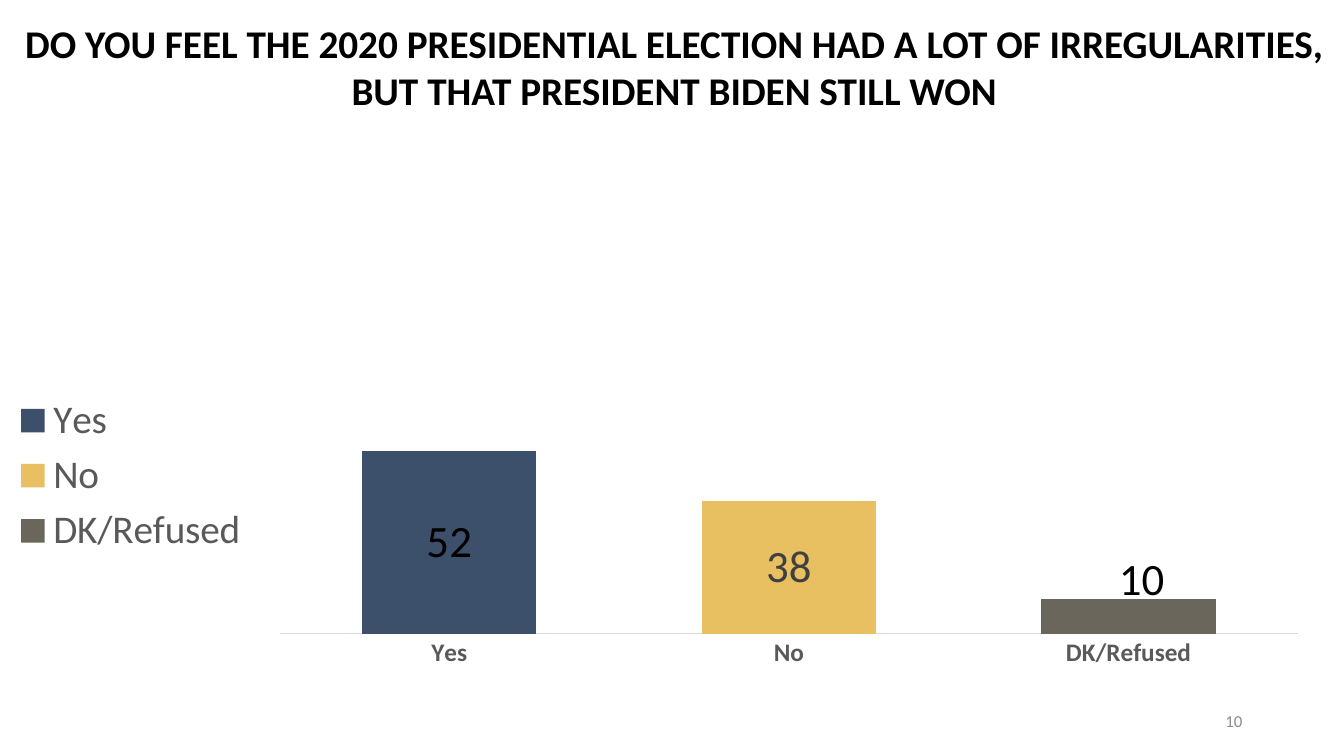
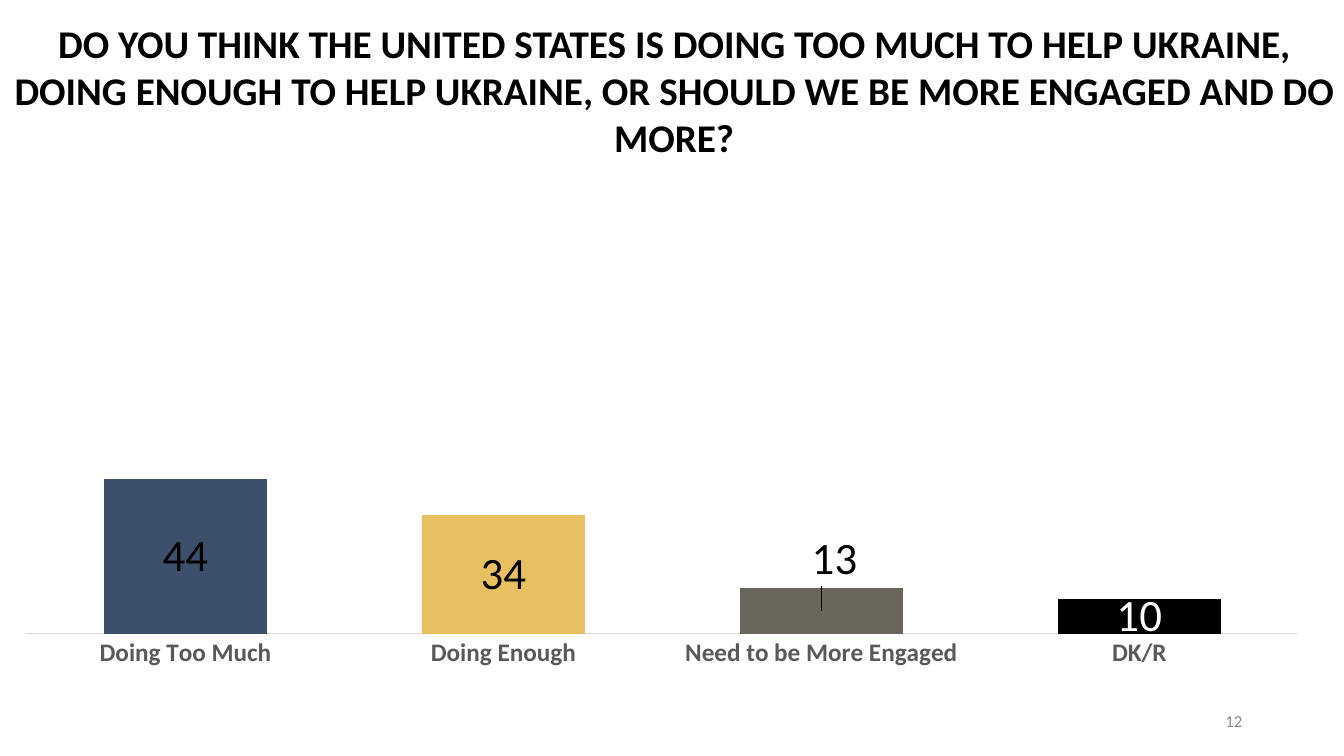
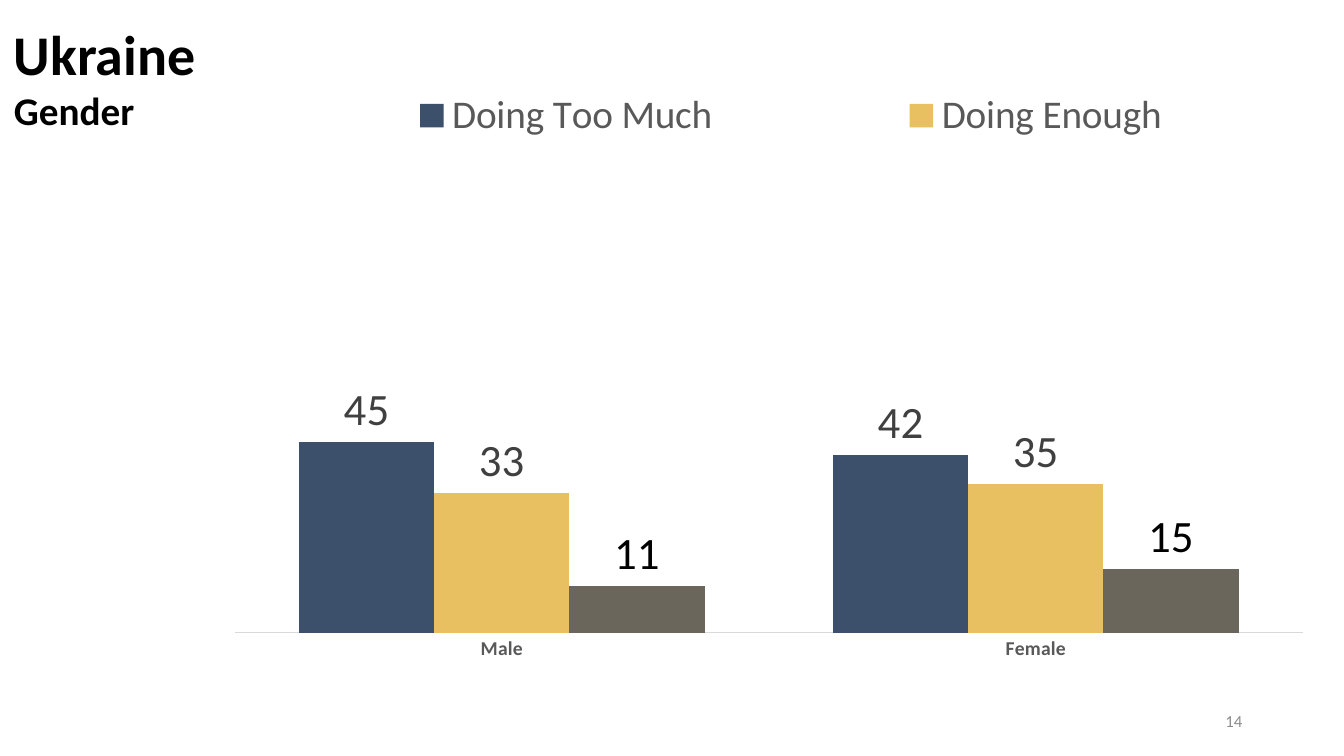
from lxml import etree
from pptx import Presentation
from pptx.chart.data import CategoryChartData
from pptx.dml.color import RGBColor
from pptx.enum.chart import (XL_CHART_TYPE, XL_LABEL_POSITION,
                             XL_LEGEND_POSITION, XL_TICK_MARK)
from pptx.enum.text import MSO_ANCHOR, PP_ALIGN
from pptx.oxml.ns import qn
from pptx.util import Inches, Pt

STACKED, CLUSTERED = XL_CHART_TYPE.COLUMN_STACKED, XL_CHART_TYPE.COLUMN_CLUSTERED
CENTER, OUTSIDE = XL_LABEL_POSITION.CENTER, XL_LABEL_POSITION.OUTSIDE_END
LEGEND_LEFT, LEGEND_TOP = XL_LEGEND_POSITION.LEFT, XL_LEGEND_POSITION.TOP
NO_TICK = XL_TICK_MARK.NONE
ALIGN_LEFT, ALIGN_CENTER, ALIGN_RIGHT = PP_ALIGN.LEFT, PP_ALIGN.CENTER, PP_ALIGN.RIGHT
TOP, MIDDLE = MSO_ANCHOR.TOP, MSO_ANCHOR.MIDDLE

FONT = "Calibri"
COLORS = {
    "navy": "3C4F6B", "gold": "E8C062", "stone": "6B665B",
    "black": "000000", "white": "FFFFFF", "dark": "404040",
    "gray": "595959", "number": "8C8C8C", "axis": "D9D9D9",
}
WIDE_CHART = (0, 2.73, 13.14, 3.98)


def rgb(name):
    return RGBColor.from_string(COLORS[name])


def style(font, size, color, bold=False):
    font.name, font.size, font.bold = FONT, Pt(size), bold
    font.color.rgb = rgb(color)


def fill(fmt, color):
    fmt.fill.solid()
    fmt.fill.fore_color.rgb = rgb(color)


# Text
def add_text(slide, box, lines, color="black", bold=True, align=ALIGN_LEFT, anchor=TOP):
    """Add a text box; lines are (text, size) pairs."""
    tf = slide.shapes.add_textbox(*map(Inches, box)).text_frame
    tf.word_wrap = True
    tf.vertical_anchor = anchor
    for i, (text, size) in enumerate(lines):
        p = tf.add_paragraph() if i else tf.paragraphs[0]
        p.text = text
        p.alignment = align
        style(p.runs[0].font, size, color, bold)


def add_question(slide, text, height):
    add_text(slide, (0.04, 0.14, 13.29, height), [(text, 28)], align=ALIGN_CENTER)


def add_number(slide, number):
    add_text(slide, (9.42, 6.95, 3, 0.4), [(str(number), 12)], "number", False,
             ALIGN_RIGHT, MIDDLE)


# Charts
def make_layout(**values):
    """Build a manual chart layout from its parts."""
    layout = etree.Element(qn("c:layout"))
    manual = etree.SubElement(layout, qn("c:manualLayout"))
    for tag, val in values.items():
        etree.SubElement(manual, qn("c:" + tag)).set("val", str(val))
    return layout


def add_columns(slide, box, kind, cats, series, axis_size=18):
    """Add a column chart; series are (name, values, fill, label colour)."""
    data = CategoryChartData()
    data.categories = cats
    for name, values, *_ in series:
        data.add_series(name, values)
    chart = slide.shapes.add_chart(kind, *map(Inches, box), data).chart
    chart.has_title = chart.has_legend = False
    style(chart.font, 10, "black")

    plot = chart.plots[0]
    plot.gap_width = 95
    plot.overlap = 100 if kind == STACKED else 0
    plot.vary_by_categories = False
    for s, (_, _, color, label_color) in zip(plot.series, series):
        fill(s.format, color)
        s.invert_if_negative = False
        labels = s.data_labels
        labels.show_value = True
        labels.position = CENTER if kind == STACKED else OUTSIDE
        style(labels.font, 32, label_color)

    axis = chart.category_axis
    axis.major_tick_mark = axis.minor_tick_mark = NO_TICK
    axis.format.line.color.rgb = rgb("axis")
    axis.format.line.width = Pt(0.75)
    style(axis.tick_labels.font, axis_size, "gray", True)

    scale = chart.value_axis
    scale.minimum_scale, scale.maximum_scale = 0, 100
    scale.has_major_gridlines = scale.visible = False
    return chart


def add_legend(chart, position):
    chart.has_legend = True
    chart.legend.position = position
    chart.legend.include_in_layout = False
    style(chart.legend.font, 28, "gray")


def style_point_label(series, index, color, shift=None):
    """Recolour one label and move it by a share of the chart size."""
    label = series.points[index].data_label
    style(label.font, 32, color)
    label.position = CENTER
    if shift:
        idx = series._element.xpath(f'c:dLbls/c:dLbl/c:idx[@val="{index}"]')[0]
        idx.addnext(make_layout(x=shift[0], y=shift[1]))


# Slides
def election_slide(slide):
    chart = add_columns(slide, WIDE_CHART, STACKED, ["Yes", "No", "DK/Refused"], [
        ("DK/Refused", (None, None, 10), "stone", "black"),
        ("No", (None, 38, None), "gold", "dark"),
        ("Yes", (52, None, None), "navy", "black"),
    ])
    add_legend(chart, LEGEND_LEFT)
    style_point_label(chart.plots[0].series[0], 2, "black", (0.01, -0.09))
    add_question(slide, "DO YOU FEEL THE 2020 PRESIDENTIAL ELECTION HAD A LOT OF "
                 "IRREGULARITIES, BUT THAT PRESIDENT BIDEN STILL WON", 1.51)
    add_number(slide, 10)


def ukraine_slide(slide):
    cats = ["Doing Too Much", "Doing Enough", "Need to be More Engaged", "DK/R"]
    chart = add_columns(slide, WIDE_CHART, STACKED, cats,
                        [("Series 1", (44, 34, 13, 10), "navy", "black")])
    s = chart.plots[0].series[0]
    for i, color in enumerate(("gold", "stone", "black"), 1):
        fill(s.points[i].format, color)
    style_point_label(s, 2, "black", (0.01, -0.13))
    style_point_label(s, 3, "white")
    add_question(slide, "DO YOU THINK THE UNITED STATES IS DOING TOO MUCH TO HELP "
                 "UKRAINE, DOING ENOUGH TO HELP UKRAINE, OR SHOULD WE BE MORE "
                 "ENGAGED AND DO MORE?", 2.05)
    add_number(slide, 12)


def gender_slide(slide):
    chart = add_columns(slide, (2.22, 0.53, 10.92, 6.18), CLUSTERED, ["Male", "Female"], [
        ("Doing Too Much", (45, 42), "navy", "dark"),
        ("Doing Enough", (33, 35), "gold", "dark"),
        ("Need to be More Engaged", (11, 15), "stone", "black"),
    ], axis_size=14)
    add_legend(chart, LEGEND_TOP)

    # Fixed places for the legend and the plot area
    legend = chart.legend._element
    for old in legend.findall(qn("c:layout")):
        legend.remove(old)
    legend.find(qn("c:legendPos")).addnext(make_layout(
        xMode="edge", yMode="edge", x=0.15, y=0.05, w=0.73, h=0.1))
    area = chart._chartSpace.chart.plotArea
    for old in area.findall(qn("c:layout")):
        area.remove(old)
    area.insert(0, make_layout(layoutTarget="inner", xMode="edge", yMode="edge",
                               x=0.01, y=0.25, w=0.97, h=0.68))

    add_text(slide, (0.04, 0.14, 8.26, 1.92), [("Ukraine", 40), ("Gender", 28)])
    add_number(slide, 14)


def main():
    prs = Presentation()
    prs.slide_width, prs.slide_height = Inches(13.33), Inches(7.5)
    for build in (election_slide, ukraine_slide, gender_slide):
        build(prs.slides.add_slide(prs.slide_layouts[6]))
    prs.save("out.pptx")


if __name__ == "__main__":
    main()
